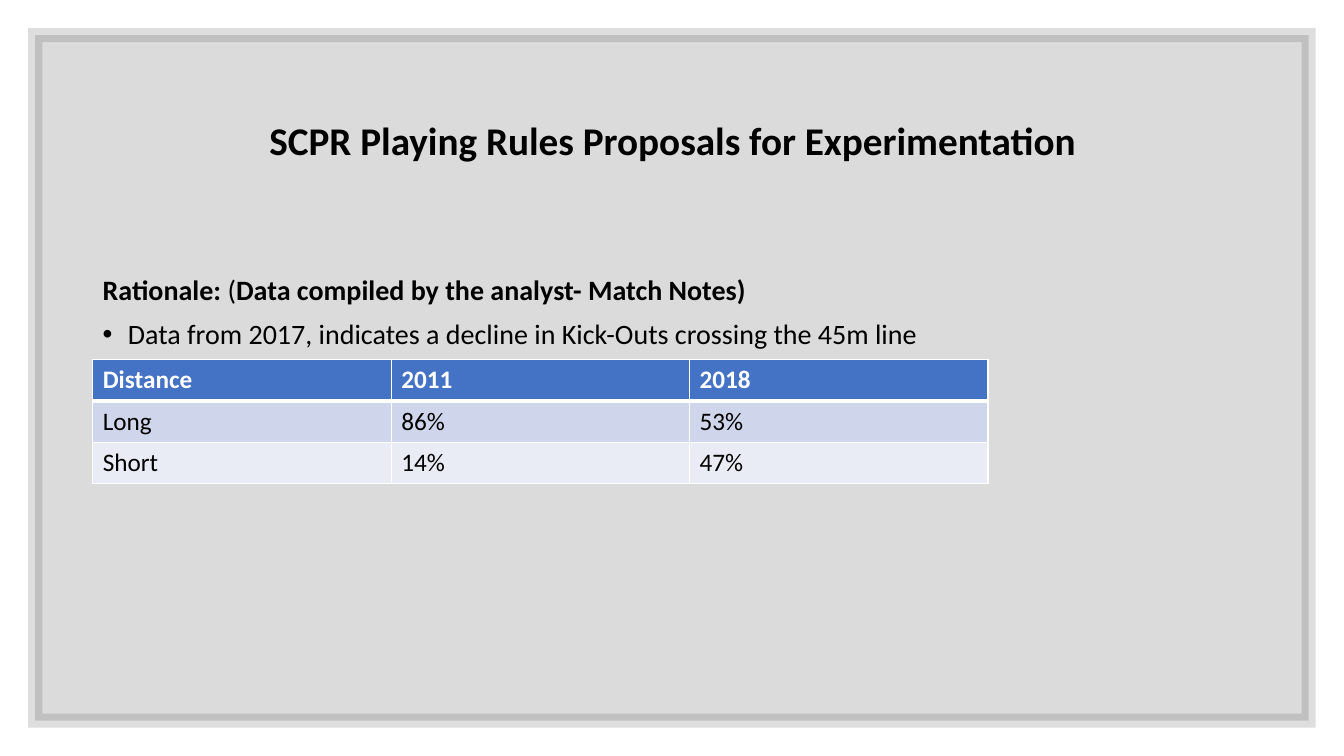
import pptx
import pptx.util
import pptx.dml.color
import pptx.enum.shapes
import pptx.enum.text
import pptx.oxml.ns
from dataclasses import dataclass
from lxml import etree

TITLE = "SCPR Playing Rules Proposals for Experimentation"
RATIONALE = [("Rationale: ", True), ("(", False), ("Data compiled by the analyst- Match Notes)", True)]
FINDING = [("Data from 2017, indicates a decline in Kick-Outs crossing the 45m line", False)]
KICKOUTS = [("Distance", "2011", "2018"), ("Long", "86%", "53%"), ("Short", "14%", "47%")]


@dataclass(frozen=True)
class Theme:
    font: str = "Calibri"
    text: str = "000000"
    inverse: str = "FFFFFF"
    frame_line: str = "262626"
    header: str = "4472C4"
    bands: tuple = ("CFD5EA", "E9EBF5")
    title_size: int = 28
    body_size: int = 20
    table_size: int = 18


THEME = Theme()
WIDTH, HEIGHT = 13.33, 7.5
MARGIN = 0.35
LEFT, CONTENT_WIDTH = 0.92, 11.5
TITLE_TOP, TITLE_HEIGHT = 0.69, 1.45
BODY_TOP, BODY_HEIGHT = 2.69, 0.9
TABLE_TOP, COLUMN_WIDTH, ROW_HEIGHT = 3.57, 2.96, 0.41
INDENT = 0.25
ALIGN = pptx.enum.text.PP_ALIGN
ANCHOR = pptx.enum.text.MSO_ANCHOR


def inches(*lengths):
    return [pptx.util.Inches(length) for length in lengths]


def rgb(color):
    return pptx.dml.color.RGBColor.from_string(color)


def add_child(parent, tag, **attributes):
    child = etree.SubElement(parent, pptx.oxml.ns.qn(tag))
    for name, value in attributes.items():
        child.set(name, str(value))
    return child


def write(paragraph, runs, *, size, color=THEME.text, align=ALIGN.LEFT,
          line_spacing=None, before=0, after=0, bullet=None):
    paragraph.alignment = align
    paragraph.line_spacing = line_spacing
    paragraph.space_before = pptx.util.Pt(before)
    paragraph.space_after = pptx.util.Pt(after)
    if bullet:
        properties = paragraph._p.get_or_add_pPr()
        properties.set("marL", str(pptx.util.Inches(INDENT)))
        properties.set("indent", str(-pptx.util.Inches(INDENT)))
        add_child(properties, "a:buFont", typeface="Arial")
        add_child(properties, "a:buChar", char=bullet)
    for text, bold in runs:
        run = paragraph.add_run()
        run.text = text
        run.font.name = THEME.font
        run.font.size = pptx.util.Pt(size)
        run.font.bold = bold
        run.font.color.rgb = rgb(color)


def set_opacity(fill_format, color, percent):
    fill_format.solid()
    fill_format.fore_color.rgb = rgb(color)
    element = fill_format._xPr.find(".//" + pptx.oxml.ns.qn("a:srgbClr"))
    add_child(element, "a:alpha", val=percent * 1000)


def add_frame(slide):
    frame = slide.shapes.add_shape(
        pptx.enum.shapes.MSO_SHAPE.RECTANGLE,
        *inches(MARGIN, MARGIN, WIDTH - 2 * MARGIN, HEIGHT - 2 * MARGIN))
    frame.shadow.inherit = False
    frame.line.width = pptx.util.Pt(10)
    set_opacity(frame.fill, THEME.text, 14)
    set_opacity(frame.line.fill, THEME.frame_line, 15)
    add_child(frame.line._ln, "a:miter", lim=800000)


def add_title(slide):
    title = slide.shapes.title
    title.left, title.top, title.width, title.height = inches(
        LEFT, TITLE_TOP, CONTENT_WIDTH, TITLE_HEIGHT)
    title.text_frame.auto_size = pptx.enum.text.MSO_AUTO_SIZE.NONE
    title.text_frame.vertical_anchor = ANCHOR.MIDDLE
    write(title.text_frame.paragraphs[0], [(TITLE, True)], size=THEME.title_size,
          align=ALIGN.CENTER, line_spacing=0.9, after=6)


def add_rationale(slide):
    box = slide.shapes.add_textbox(*inches(LEFT, BODY_TOP, CONTENT_WIDTH, BODY_HEIGHT))
    box.text_frame.word_wrap = True
    write(box.text_frame.paragraphs[0], RATIONALE, size=THEME.body_size, line_spacing=0.9)
    write(box.text_frame.add_paragraph(), FINDING, size=THEME.body_size,
          line_spacing=0.9, before=10, bullet="•")


def add_borders(cell, widths):
    properties = cell._tc.get_or_add_tcPr()
    for side, width in widths.items():
        line = add_child(properties, "a:ln" + side, w=pptx.util.Pt(width))
        add_child(add_child(line, "a:solidFill"), "a:srgbClr", val=THEME.inverse)


def add_kickout_table(slide):
    rows, columns = len(KICKOUTS), len(KICKOUTS[0])
    table = slide.shapes.add_table(rows, columns, *inches(
        LEFT, TABLE_TOP, columns * COLUMN_WIDTH, rows * ROW_HEIGHT)).table
    for column in table.columns:
        column.width = pptx.util.Inches(COLUMN_WIDTH)
    for row_index, values in enumerate(KICKOUTS):
        table.rows[row_index].height = pptx.util.Inches(ROW_HEIGHT)
        is_header = row_index == 0
        fill = THEME.header if is_header else THEME.bands[(row_index - 1) % 2]
        borders = {"L": 1, "R": 1, "T": 3 if row_index == 1 else 1, "B": 3 if is_header else 1}
        for column_index, value in enumerate(values):
            cell = table.cell(row_index, column_index)
            add_borders(cell, borders)
            cell.fill.solid()
            cell.fill.fore_color.rgb = rgb(fill)
            write(cell.text_frame.paragraphs[0], [(value, is_header)], size=THEME.table_size,
                  color=THEME.inverse if is_header else THEME.text)


def main():
    presentation = pptx.Presentation()
    presentation.slide_width, presentation.slide_height = inches(WIDTH, HEIGHT)
    slide = presentation.slides.add_slide(presentation.slide_layouts.get_by_name("Title Only"))
    add_frame(slide)
    add_title(slide)
    add_rationale(slide)
    add_kickout_table(slide)
    presentation.save("out.pptx")


if __name__ == "__main__":
    main()
